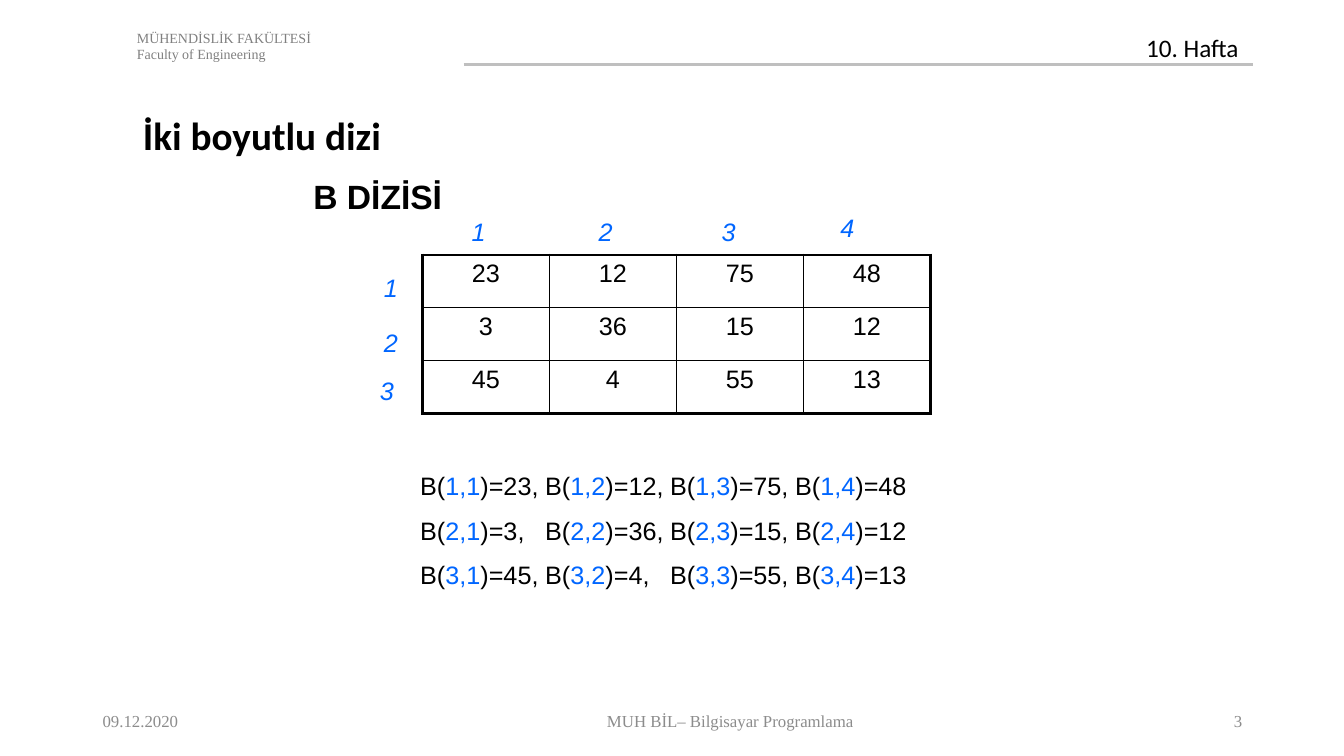
from dataclasses import dataclass
from typing import NamedTuple

from lxml.etree import SubElement
from pptx import Presentation
from pptx.dml.color import RGBColor
from pptx.enum.shapes import MSO_CONNECTOR as Connector
from pptx.enum.text import MSO_ANCHOR as Anchor, PP_ALIGN as Align
from pptx.oxml.ns import qn
from pptx.slide import Slide
from pptx.table import _Cell as Cell
from pptx.text.text import _Paragraph as Paragraph
from pptx.util import Inches, Pt

SLIDE_WIDTH = Inches(13.333)
SLIDE_HEIGHT = Inches(7.5)


@dataclass(frozen=True)
class Theme:
    black: str = "000000"
    index_blue: str = "0066FF"
    faculty_grey: str = "808080"
    footer_grey: str = "8C8C8C"
    rule_grey: str = "BFBFBF"
    body_font: str = "Arial"
    title_font: str = "Calibri"
    header_font: str = "Times New Roman"
    title_size: float = 28
    array_size: float = 24
    body_size: float = 18
    footer_size: float = 12
    faculty_size: float = 10
    line_gap: float = 10
    rule_width: float = 1.5
    outer_border: float = 2.25
    inner_border: float = 1


THEME = Theme()


class Style(NamedTuple):
    font: str
    size: float
    color: str
    bold: bool = False
    italic: bool = False


class Box(NamedTuple):
    left: float
    top: float
    width: float
    height: float


class Label(NamedTuple):
    box: Box
    lines: tuple[str, ...]
    style: Style
    align: Align = Align.LEFT
    anchor: Anchor = Anchor.TOP


BODY = Style(THEME.body_font, THEME.body_size, THEME.black)
INDEX = BODY._replace(color=THEME.index_blue)
AXIS = INDEX._replace(italic=True)
ARRAY_NAME = Style(THEME.body_font, THEME.array_size, THEME.black, bold=True)
TITLE = Style(THEME.title_font, THEME.title_size, THEME.black, bold=True)
WEEK = Style(THEME.title_font, THEME.body_size, THEME.black)
FACULTY = Style(THEME.header_font, THEME.faculty_size, THEME.faculty_grey)
FOOTER = Style(THEME.header_font, THEME.footer_size, THEME.footer_grey)

ARRAY = ((23, 12, 75, 48), (3, 36, 15, 12), (45, 4, 55, 13))
ARRAY_BOX = Box(31.43, 33.73, 37.8, 20.93)
ELEMENTS_BOX = Box(30.53, 61.6, 40.73, 23.47)
ELEMENT_PITCH = Inches(1.24)

COLUMN_PLACES = ((34.35, 28), (43.8, 28), (52.95, 28), (61.8, 27.47))
ROW_PLACES = ((27.83, 35.33), (27.83, 42.67), (27.53, 48.93))
AXIS_LABELS = [
    Label(Box(left, top, 4.73, 5.33), (str(number),), AXIS)
    for places in (COLUMN_PLACES, ROW_PLACES)
    for number, (left, top) in enumerate(places, start=1)
]

LABELS = [
    Label(Box(9.45, 3.2, 50, 5.87),
          ("MÜHENDİSLİK FAKÜLTESİ", "Faculty of Engineering"), FACULTY),
    Label(Box(84.53, 3.6, 8.63, 5.33), ("10. Hafta",), WEEK),
    Label(Box(9.9, 14.13, 35.33, 7.6), ("İki boyutlu dizi",), TITLE),
    Label(Box(22.58, 22.67, 14.48, 6.67), ("B DİZİSİ",), ARRAY_NAME),
    *AXIS_LABELS,
    Label(Box(6.9, 92.67, 18.68, 5.33), ("09.12.2020",), FOOTER,
          anchor=Anchor.MIDDLE),
    Label(Box(20.48, 92.67, 67.73, 5.33),
          ("MUH BİL– Bilgisayar Programlama",), FOOTER,
          Align.CENTER, Anchor.MIDDLE),
    Label(Box(89.78, 92.67, 3.38, 5.33), ("3",), FOOTER,
          Align.RIGHT, Anchor.MIDDLE),
]


def across(columns: float) -> int:
    return round(SLIDE_WIDTH * columns / 100)


def down(rows: float) -> int:
    return round(SLIDE_HEIGHT * rows / 100)


def place(box: Box) -> tuple[int, int, int, int]:
    return across(box.left), down(box.top), across(box.width), down(box.height)


def add_run(paragraph: Paragraph, text: str, style: Style) -> None:
    run = paragraph.add_run()
    run.text = text
    run.font.name = style.font
    run.font.size = Pt(style.size)
    run.font.bold = style.bold
    run.font.italic = style.italic
    run.font.color.rgb = RGBColor.from_string(style.color)


def add_text_box(slide: Slide, box: Box, line_count: int,
                 anchor: Anchor = Anchor.TOP) -> tuple[Paragraph, ...]:
    frame = slide.shapes.add_textbox(*place(box)).text_frame
    frame.word_wrap = True
    frame.vertical_anchor = anchor
    for _ in range(line_count - 1):
        frame.add_paragraph()
    return frame.paragraphs


def add_label(slide: Slide, label: Label) -> None:
    paragraphs = add_text_box(slide, label.box, len(label.lines), label.anchor)
    for paragraph, line in zip(paragraphs, label.lines):
        paragraph.alignment = label.align
        add_run(paragraph, line, label.style)


def add_header_rule(slide: Slide) -> None:
    rule = slide.shapes.add_connector(
        Connector.STRAIGHT, across(34.5), down(8.53), across(93.25), down(8.53))
    rule.line.color.rgb = RGBColor.from_string(THEME.rule_grey)
    rule.line.width = Pt(THEME.rule_width)
    SubElement(rule._element.spPr, qn("a:effectLst"))


def add_border(cell: Cell, side: str, outer: bool) -> None:
    width = THEME.outer_border if outer else THEME.inner_border
    properties = cell._tc.get_or_add_tcPr()
    border = SubElement(properties, qn(f"a:ln{side}"), w=str(int(Pt(width))))
    fill = SubElement(border, qn("a:solidFill"))
    SubElement(fill, qn("a:srgbClr"), val=THEME.black)


def add_array_table(slide: Slide) -> None:
    row_count, column_count = len(ARRAY), len(ARRAY[0])
    table = slide.shapes.add_table(
        row_count, column_count, *place(ARRAY_BOX)).table
    table.first_row = False
    table.horz_banding = False
    for row, values in enumerate(ARRAY):
        for column, value in enumerate(values):
            cell = table.cell(row, column)
            add_border(cell, "L", column == 0)
            add_border(cell, "R", column == column_count - 1)
            add_border(cell, "T", row == 0)
            add_border(cell, "B", row == row_count - 1)
            cell.fill.background()
            paragraph = cell.text_frame.paragraphs[0]
            paragraph.alignment = Align.CENTER
            add_run(paragraph, str(value), BODY)


def add_element_list(slide: Slide) -> None:
    paragraphs = add_text_box(slide, ELEMENTS_BOX, len(ARRAY))
    for row, (paragraph, values) in enumerate(zip(paragraphs, ARRAY), start=1):
        if row > 1:
            paragraph.space_before = Pt(THEME.line_gap)
        tabs = SubElement(paragraph._p.get_or_add_pPr(), qn("a:tabLst"))
        for stop in range(1, len(values)):
            SubElement(tabs, qn("a:tab"), pos=str(stop * ELEMENT_PITCH), algn="l")
        opening = "B("
        for column, value in enumerate(values, start=1):
            add_run(paragraph, opening, BODY)
            add_run(paragraph, f"{row},{column}", INDEX)
            opening = f")={value},\tB("
        add_run(paragraph, f")={values[-1]}", BODY)


def main() -> None:
    presentation = Presentation()
    presentation.slide_width = SLIDE_WIDTH
    presentation.slide_height = SLIDE_HEIGHT
    slide = presentation.slides.add_slide(presentation.slide_layouts[6])
    add_header_rule(slide)
    add_array_table(slide)
    add_element_list(slide)
    for label in LABELS:
        add_label(slide, label)
    presentation.save("out.pptx")


if __name__ == "__main__":
    main()
